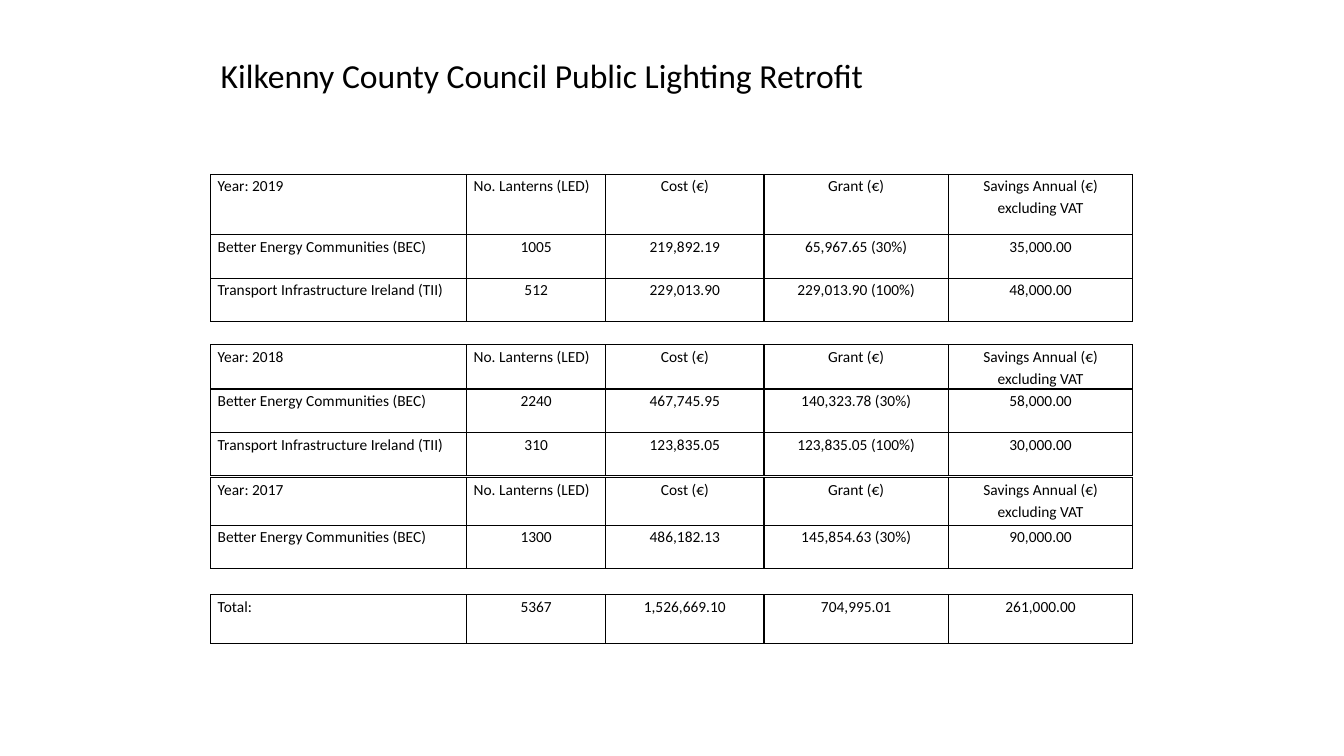
import dataclasses

import pptx
import pptx.dml.color
import pptx.enum.text
import pptx.oxml.ns
import pptx.util
from lxml import etree

ALIGN = pptx.enum.text.PP_ALIGN


@dataclasses.dataclass(frozen=True)
class Theme:
    font: str = "Calibri"
    ink: str = "000000"
    title_size: float = 24
    cell_size: float = 11
    border_width: float = 1


# Grid of 80 columns by 45 rows, six to the inch
GRID_COLUMNS, GRID_ROWS = 80, 45
LEFT = 12.54
COLUMN_WIDTHS = [15.24, 8.28, 9.42, 10.98, 10.98]
DATA_ROW = 2.58

HEADINGS = ["No. Lanterns (LED)", "Cost (€)", "Grant (€)", "Savings Annual (€) excluding VAT"]
BEC = "Better Energy Communities (BEC)"
TII = "Transport Infrastructure Ireland (TII)"

# Top, height of the first row, rows of text
YEARS = [
    (10.38, 3.6, [
        ["Year: 2019", *HEADINGS],
        [BEC, "1005", "219,892.19", "65,967.65 (30%)", "35,000.00"],
        [TII, "512", "229,013.90", "229,013.90 (100%)", "48,000.00"],
    ]),
    (20.52, 2.64, [
        ["Year: 2018", *HEADINGS],
        [BEC, "2240", "467,745.95", "140,323.78 (30%)", "58,000.00"],
        [TII, "310", "123,835.05", "123,835.05 (100%)", "30,000.00"],
    ]),
    (28.44, 2.82, [
        ["Year: 2017", *HEADINGS],
        [BEC, "1300", "486,182.13", "145,854.63 (30%)", "90,000.00"],
    ]),
    (35.4, 2.88, [
        ["Total:", "5367", "1,526,669.10", "704,995.01", "261,000.00"],
    ]),
]


def write(frame, text, *, font, size, color, align=ALIGN.LEFT, line_spacing=None, space_after=None):
    frame.word_wrap = True
    paragraph = frame.paragraphs[0]
    paragraph.alignment = align
    if line_spacing is not None:
        paragraph.line_spacing = line_spacing
    if space_after is not None:
        paragraph.space_after = pptx.util.Pt(space_after)
    run = paragraph.add_run()
    run.text = text
    run.font.name = font
    run.font.size = pptx.util.Pt(size)
    run.font.color.rgb = pptx.dml.color.RGBColor.from_string(color)


class SlideBuilder:
    def __init__(self, deck, theme):
        self.theme = theme
        self.slide = deck.slides.add_slide(deck.slide_layouts[5])
        self.column = deck.slide_width / GRID_COLUMNS
        self.row = deck.slide_height / GRID_ROWS

    def across(self, columns):
        return pptx.util.Emu(round(columns * self.column))

    def down(self, rows):
        return pptx.util.Emu(round(rows * self.row))

    def title(self, text, left, top, width, height):
        heading = self.slide.shapes.title
        heading.left, heading.top = self.across(left), self.down(top)
        heading.width, heading.height = self.across(width), self.down(height)
        frame = heading.text_frame
        frame.vertical_anchor = pptx.enum.text.MSO_ANCHOR.TOP
        frame.auto_size = pptx.enum.text.MSO_AUTO_SIZE.SHAPE_TO_FIT_TEXT
        write(frame, text, font=self.theme.font, size=self.theme.title_size, color=self.theme.ink)

    def border(self, cell):
        properties = cell._tc.get_or_add_tcPr()
        for side in ("a:lnL", "a:lnR", "a:lnT", "a:lnB"):
            line = etree.SubElement(properties, pptx.oxml.ns.qn(side))
            line.set("w", str(pptx.util.Pt(self.theme.border_width)))
            fill = etree.SubElement(line, pptx.oxml.ns.qn("a:solidFill"))
            etree.SubElement(fill, pptx.oxml.ns.qn("a:srgbClr")).set("val", self.theme.ink)

    def cell(self, cell, text, align):
        cell.margin_left = cell.margin_right = pptx.util.Inches(0.07)
        cell.margin_top = cell.margin_bottom = 0
        self.border(cell)
        cell.fill.background()
        write(cell.text_frame, text, font=self.theme.font, size=self.theme.cell_size,
              color=self.theme.ink, align=align, line_spacing=1.15, space_after=10)

    def table(self, rows, left, top, widths, heights):
        table = self.slide.shapes.add_table(
            len(rows), len(widths), self.across(left), self.down(top),
            self.across(sum(widths)), self.down(sum(heights))).table
        table.first_row = table.horz_banding = False
        for column, width in zip(table.columns, widths):
            column.width = self.across(width)
        for r, (texts, height) in enumerate(zip(rows, heights)):
            table.rows[r].height = self.down(height)
            for c, text in enumerate(texts):
                at_left = c == 0 or text == HEADINGS[0]
                self.cell(table.cell(r, c), text, ALIGN.LEFT if at_left else ALIGN.CENTER)


def main():
    deck = pptx.Presentation()
    deck.slide_width = pptx.util.Inches(13.33)
    deck.slide_height = pptx.util.Inches(7.5)
    lighting = SlideBuilder(deck, Theme())

    # Yearly tables and total
    for top, first_row, rows in YEARS:
        heights = [first_row] + [DATA_ROW] * (len(rows) - 1)
        lighting.table(rows, LEFT, top, COLUMN_WIDTHS, heights)

    # Title
    lighting.title("Kilkenny County Council Public Lighting Retrofit", LEFT, 2.94, 42.72, 3)

    deck.save("out.pptx")


if __name__ == "__main__":
    main()
